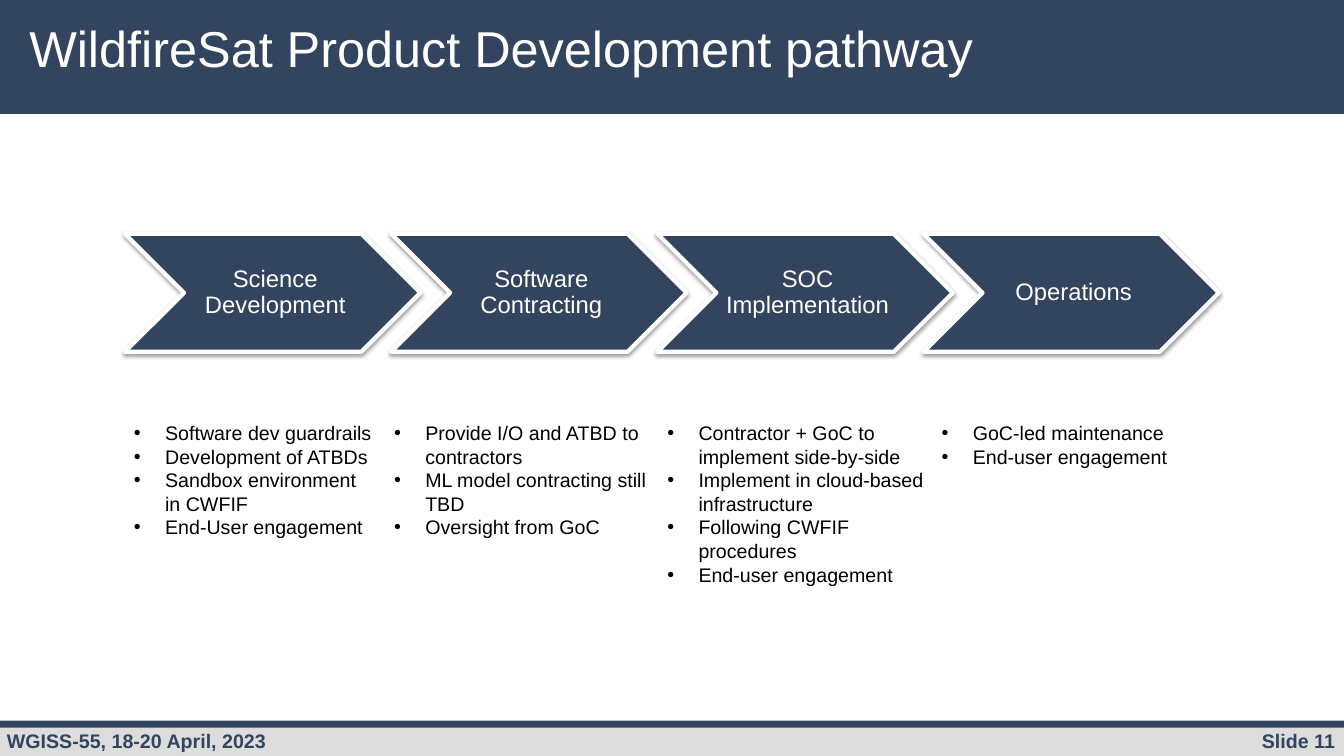
from lxml import etree
from pptx import Presentation
from pptx.dml.color import RGBColor
from pptx.enum.shapes import MSO_SHAPE
from pptx.enum.text import MSO_ANCHOR, PP_ALIGN
from pptx.oxml.ns import qn
from pptx.util import Inches, Pt

RECTANGLE, CHEVRON = MSO_SHAPE.RECTANGLE, MSO_SHAPE.CHEVRON
TOP, MIDDLE = MSO_ANCHOR.TOP, MSO_ANCHOR.MIDDLE
LEFT, CENTER, RIGHT = PP_ALIGN.LEFT, PP_ALIGN.CENTER, PP_ALIGN.RIGHT
NAVY, GREY, WHITE, BLACK = "33445F", "DDDDDD", "FFFFFF", "000000"
TITLE_ONLY = 5
WIDTH, HEIGHT = 13.33, 7.5
STAGE_LEFT, STAGE_STEP = 1.24, 2.64

STAGES = [
    ("Science Development", 1.23, 2.57, 1.51,
     ["Software dev guardrails", "Development of ATBDs",
      "Sandbox environment in CWFIF", "End-User engagement"]),
    ("Software Contracting", 3.81, 2.86, 1.28,
     ["Provide I/O and ATBD to contractors",
      "ML model contracting still TBD", "Oversight from GoC"]),
    ("SOC Implementation", 6.52, 2.86, 1.99,
     ["Contractor + GoC to implement side-by-side",
      "Implement in cloud-based infrastructure",
      "Following CWFIF procedures", "End-user engagement"]),
    ("Operations", 9.24, 2.86, 0.57,
     ["GoC-led maintenance", "End-user engagement"]),
]


def rgb(color):
    """Turn a hex string into a colour."""
    return RGBColor.from_string(color)


def style_text(paragraph, size, color, align=LEFT, bold=False, spacing=None):
    """Format a paragraph and its runs."""
    paragraph.alignment = align
    paragraph.line_spacing = spacing
    for run in paragraph.runs:
        run.font.name = "Arial"
        run.font.size = Pt(size)
        run.font.bold = bold
        run.font.color.rgb = rgb(color)


def add_filled(slide, preset, left, top, width, height, fill):
    """Add a filled shape without outline or shadow."""
    shape = slide.shapes.add_shape(
        preset, Inches(left), Inches(top), Inches(width), Inches(height))
    shape.fill.solid()
    shape.fill.fore_color.rgb = rgb(fill)
    shape.line.fill.background()
    shape.shadow.inherit = False
    return shape


def add_text_frame(slide, left, top, width, height):
    """Add a wrapping text box and return its frame."""
    box = slide.shapes.add_textbox(
        Inches(left), Inches(top), Inches(width), Inches(height))
    box.text_frame.word_wrap = True
    return box.text_frame


def add_title(slide, text):
    """Place the title in front of the header band."""
    title = slide.shapes.title
    title.left, title.top = Inches(0.19), Inches(0.19)
    title.width, title.height = Inches(10.27), Inches(0.85)
    title.text_frame.text = text
    title.text_frame.vertical_anchor = TOP
    title.text_frame.word_wrap = True
    style_text(title.text_frame.paragraphs[0], 36, WHITE, spacing=0.9)
    title.element.getparent().append(title.element)


def add_footer(slide, text, left, width, align):
    """Add one footer label."""
    frame = add_text_frame(slide, left, 7.18, width, 0.34)
    frame.text = text
    style_text(frame.paragraphs[0], 14, NAVY, align, bold=True)


def add_drop_shadow(shape):
    """Give a shape a soft shadow straight below it."""
    effects = shape.element.spPr.find(qn("a:effectLst"))
    shadow = etree.SubElement(
        effects, qn("a:outerShdw"), blurRad=str(Pt(3.1)), dist=str(Pt(1.6)),
        dir="5400000", rotWithShape="0")
    color = etree.SubElement(shadow, qn("a:srgbClr"), val=BLACK)
    etree.SubElement(color, qn("a:alpha"), val="38000")


def add_stage(slide, text, left):
    """Add a labelled chevron."""
    chevron = add_filled(slide, CHEVRON, left, 2.32, 2.93, 1.17, NAVY)
    chevron.line.color.rgb = rgb(WHITE)
    chevron.line.width = Pt(3)
    add_drop_shadow(chevron)
    frame = chevron.text_frame
    frame.text = text
    frame.word_wrap = True
    frame.vertical_anchor = MIDDLE
    frame.margin_left = Inches(0.07)
    frame.margin_top = frame.margin_right = frame.margin_bottom = Inches(0.02)
    style_text(frame.paragraphs[0], 17, WHITE, CENTER, spacing=0.9)


def add_bullets(slide, items, left, width, height):
    """Add a bulleted list under a stage."""
    frame = add_text_frame(slide, left, 4.13, width, height)
    frame.text = "\n".join(items)
    for paragraph in frame.paragraphs:
        properties = paragraph._p.get_or_add_pPr()
        properties.set("marL", str(Inches(0.31)))
        properties.set("indent", str(Inches(-0.31)))
        etree.SubElement(properties, qn("a:buFont"), typeface="Arial")
        etree.SubElement(properties, qn("a:buChar"), char="•")
        style_text(paragraph, 14, BLACK)


def main():
    """Build the slide and save it."""
    deck = Presentation()
    deck.slide_width, deck.slide_height = Inches(WIDTH), Inches(HEIGHT)
    slide = deck.slides.add_slide(deck.slide_layouts[TITLE_ONLY])
    add_filled(slide, RECTANGLE, 0, 0, WIDTH, 1.13, NAVY)
    add_filled(slide, RECTANGLE, 0, 7.19, WIDTH, 0.31, GREY)
    add_filled(slide, RECTANGLE, 0, 7.15, WIDTH, 0.07, NAVY)
    add_footer(slide, "Slide 11", 11.23, 2.11, RIGHT)
    add_footer(slide, "WGISS-55, 18-20 April, 2023", -0.03, 5.39, LEFT)
    add_title(slide, "WildfireSat Product Development pathway")
    for index, (name, left, width, height, items) in enumerate(STAGES):
        add_stage(slide, name, STAGE_LEFT + index * STAGE_STEP)
        add_bullets(slide, items, left, width, height)
    deck.save("out.pptx")


if __name__ == "__main__":
    main()
